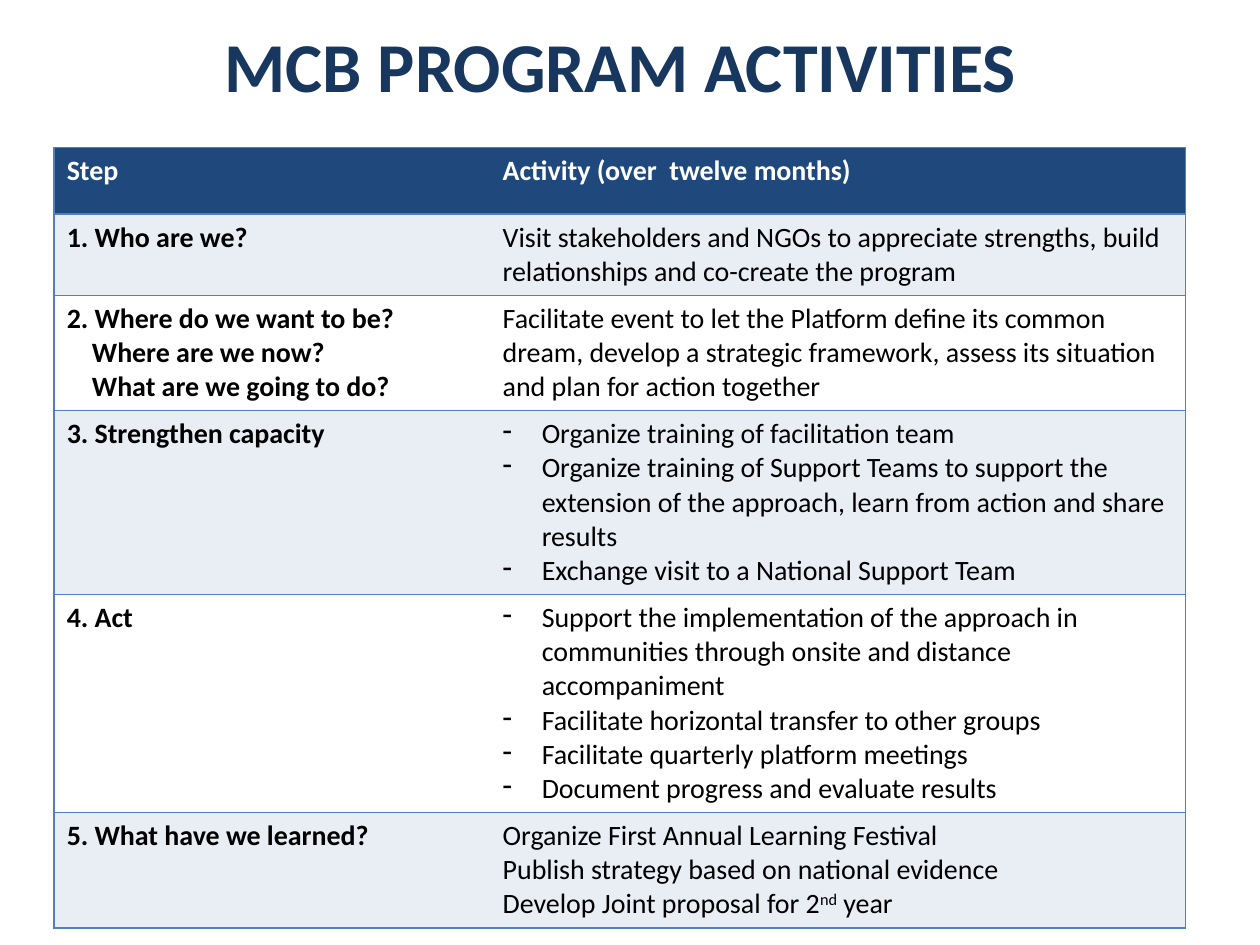
from lxml.etree import SubElement
from pptx import Presentation
from pptx.dml.color import RGBColor
from pptx.enum.text import MSO_ANCHOR, PP_ALIGN
from pptx.oxml.ns import qn
from pptx.util import Inches, Pt

FONT = "Calibri"
NAVY, HEADER, BORDER = "17375E", "1F497D", "4F81BD"
BAND, WHITE, BLACK = "E9EDF4", "FFFFFF", "000000"

COLUMN_WIDTHS = [3.46, 5.52]
ROW_HEIGHTS = [0.53, 0.64, 0.9, 1.44, 1.7, 0.9]

# "- " starts a bullet, "> " an indented line, and ^...^ encloses a superscript.
ROWS = [
    (["Step"], ["Activity (over  twelve months)"]),
    (["1. Who are we?"],
     ["Visit stakeholders and NGOs to appreciate strengths, build "
      "relationships and co-create the program"]),
    (["2. Where do we want to be?",
      "> Where are we now?",
      "> What are we going to do?"],
     ["Facilitate event to let the Platform define its common dream, develop a "
      "strategic framework, assess its situation and plan for action together"]),
    (["3. Strengthen capacity"],
     ["- Organize training of facilitation team",
      "- Organize training of Support Teams to support the extension of the "
      "approach, learn from action and share results",
      "- Exchange visit to a National Support Team"]),
    (["4. Act"],
     ["- Support the implementation of the approach in communities through "
      "onsite and distance accompaniment",
      "- Facilitate horizontal transfer to other groups",
      "- Facilitate quarterly platform meetings",
      "- Document progress and evaluate results"]),
    (["5. What have we learned?"],
     ["Organize First Annual Learning Festival",
      "Publish strategy based on national evidence",
      "Develop Joint proposal for 2^nd^ year"]),
]


def rgb(hex_color):
    return RGBColor.from_string(hex_color)


def style_font(font, size, color, bold):
    font.name, font.size, font.bold = FONT, Pt(size), bold
    font.color.rgb = rgb(color)


def set_indent(paragraph, left, hanging=0):
    properties = paragraph._p.get_or_add_pPr()
    properties.set("marL", str(Inches(left)))
    properties.set("indent", str(-Inches(hanging)))
    return properties


def write_line(paragraph, line, color, bold):
    """Write one marked-up line as a paragraph."""
    if line.startswith("- "):
        properties = set_indent(paragraph, 0.31, 0.31)
        SubElement(properties, qn("a:buChar"), char="-")
    elif line.startswith("> "):
        set_indent(paragraph, 0.2)
    for index, part in enumerate(line.removeprefix("- ").removeprefix("> ").split("^")):
        run = paragraph.add_run()
        run.text = part
        style_font(run.font, 16, color, bold)
        if index % 2:
            run._r.get_or_add_rPr().set("baseline", "30000")


def set_borders(cell, visible_sides):
    properties = cell._tc.get_or_add_tcPr()
    for side in "LRTB":
        line = SubElement(properties, qn(f"a:ln{side}"), w=str(Pt(1)))
        if side in visible_sides:
            fill = SubElement(line, qn("a:solidFill"))
            SubElement(fill, qn("a:srgbClr"), val=BORDER)
        else:
            SubElement(line, qn("a:noFill"))


def fill_cell(cell, lines, fill, color, bold, visible_sides):
    set_borders(cell, visible_sides)
    cell.fill.solid()
    cell.fill.fore_color.rgb = rgb(fill)
    frame = cell.text_frame
    for index, line in enumerate(lines):
        paragraph = frame.add_paragraph() if index else frame.paragraphs[0]
        write_line(paragraph, line, color, bold)


def place_title(title, left, top, width, height):
    title.left, title.top = Inches(left), Inches(top)
    title.width, title.height = Inches(width), Inches(height)
    frame = title.text_frame
    frame.text = "MCB PROGRAM ACTIVITIES"
    frame.vertical_anchor = MSO_ANCHOR.TOP
    heading = frame.paragraphs[0]
    heading.alignment = PP_ALIGN.CENTER
    style_font(heading.runs[0].font, 40, NAVY, True)


def add_activities(slide, left, top):
    """Add the table of steps and activities."""
    table = slide.shapes.add_table(
        len(ROWS), len(COLUMN_WIDTHS), Inches(left), Inches(top),
        Inches(sum(COLUMN_WIDTHS)), Inches(sum(ROW_HEIGHTS))).table
    for column, width in zip(table.columns, COLUMN_WIDTHS):
        column.width = Inches(width)
    for row, height in zip(table.rows, ROW_HEIGHTS):
        row.height = Inches(height)
    for r, (step, activity) in enumerate(ROWS):
        fill = HEADER if r == 0 else BAND if r % 2 else WHITE
        color = BLACK if r else WHITE
        fill_cell(table.cell(r, 0), step, fill, color, True, "LTB")
        fill_cell(table.cell(r, 1), activity, fill, color, r == 0, "RTB")


def main():
    deck = Presentation()
    deck.slide_width, deck.slide_height = Inches(10), Inches(7.5)
    slide = deck.slides.add_slide(deck.slide_layouts[5])
    place_title(slide.shapes.title, 0.83, 0.13, 8.19, 0.77)
    add_activities(slide, 0.43, 1.17)
    deck.save("out.pptx")


if __name__ == "__main__":
    main()
